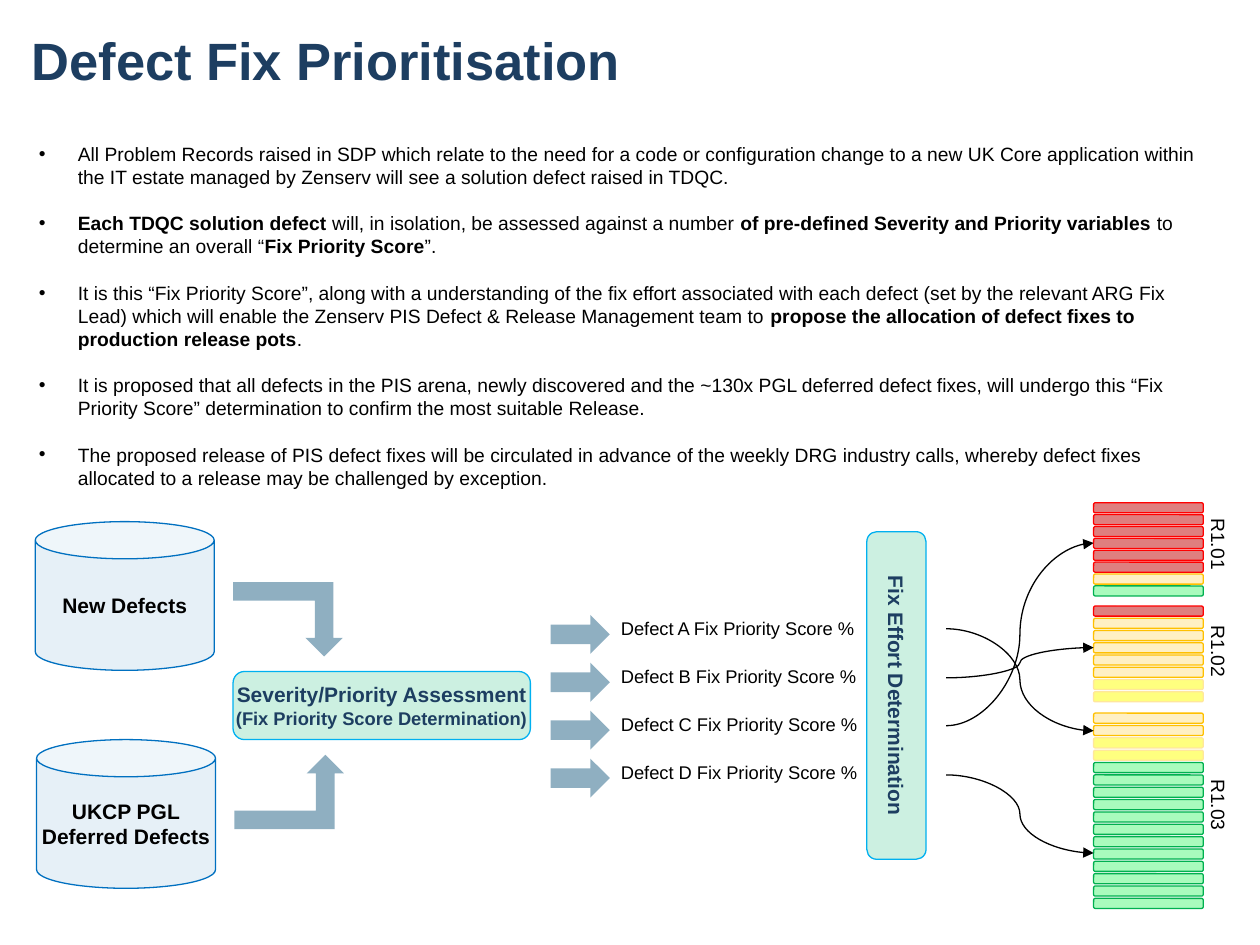
from dataclasses import dataclass

from lxml.etree import SubElement
from pptx import Presentation
from pptx.dml.color import RGBColor
from pptx.enum.shapes import MSO_CONNECTOR as CONNECTOR, MSO_SHAPE as SHAPE
from pptx.enum.text import MSO_ANCHOR as ANCHOR, PP_ALIGN as ALIGN
from pptx.oxml.ns import qn
from pptx.util import Inches, Pt


@dataclass(frozen=True)
class Theme:
    font: str = "Arial"
    ink: str = "000000"
    heading: str = "1D3E61"
    arrow: str = "206085"
    store: tuple = ("CEE3F0", "0070C0")
    step: tuple = ("9AE2C5", "00B0F0")
    red: tuple = ("C00000", "FF0000")
    amber: tuple = ("FFE38B", "FFC000")
    yellow: tuple = ("FFFF00", "FFE79B")
    green: tuple = ("55F97C", "00B050")
    title_size: float = 30
    box_size: float = 12
    body_size: float = 11
    small_size: float = 10.5
    line_width: float = 0.75
    bullet_gap: float = 13.2


THEME = Theme()

POINTS = [
    "All Problem Records raised in SDP which relate to the need for a code or "
    "configuration change to a new UK Core application within the IT estate "
    "managed by Zenserv will see a solution defect raised in TDQC.",
    "**Each TDQC solution defect **will, in isolation, be assessed against a number "
    "**of pre-defined Severity and Priority variables **to determine an overall "
    "“**Fix Priority Score**”.",
    "It is this “Fix Priority Score”, along with a understanding of the fix effort "
    "associated with each defect (set by the relevant ARG Fix Lead) which will "
    "enable the Zenserv PIS Defect & Release Management team to **propose the "
    "allocation of defect fixes to production release pots**.",
    "It is proposed that all defects in the PIS arena, newly discovered and the "
    "~130x PGL deferred defect fixes, will undergo this “Fix Priority Score” "
    "determination to confirm the most suitable Release.",
    "The proposed release of PIS defect fixes will be circulated in advance of the "
    "weekly DRG industry calls, whereby defect fixes allocated to a release may be "
    "challenged by exception.",
]


def write_text(frame, text, size=THEME.body_size, color=THEME.ink, bold=False,
               align=ALIGN.LEFT, bullet=False, gap=0, later_size=None):
    """Fill a frame, one paragraph a line; ** switches bold on and off."""
    for row, line in enumerate(text.split("\n")):
        paragraph = frame.add_paragraph() if row else frame.paragraphs[0]
        paragraph.alignment = align
        if row and gap:
            paragraph.space_before = Pt(gap)
        if bullet:
            props = paragraph._p.get_or_add_pPr()
            props.set("marL", str(Inches(0.31)))
            props.set("indent", str(Inches(-0.31)))
            SubElement(props, qn("a:buFont")).set("typeface", THEME.font)
            SubElement(props, qn("a:buChar")).set("char", "•")
        for part, words in enumerate(line.split("**")):
            if not words:
                continue
            run = paragraph.add_run()
            run.text = words
            run.font.name = THEME.font
            run.font.size = Pt(later_size if row and later_size else size)
            run.font.bold = bold or part % 2 == 1
            run.font.color.rgb = RGBColor.from_string(color)


class SlideBuilder:
    def __init__(self, slide, theme):
        self.slide = slide
        self.theme = theme

    def text(self, text, left, top, width, height, rotation=0, **text_format):
        box = self.slide.shapes.add_textbox(
            Inches(left), Inches(top), Inches(width), Inches(height))
        box.rotation = rotation
        box.text_frame.word_wrap = True
        write_text(box.text_frame, text, **text_format)
        return box.text_frame

    def shape(self, preset, left, top, width, height, fill, line=None):
        """Add a preset shape with a half-transparent fill."""
        shape = self.slide.shapes.add_shape(
            preset, Inches(left), Inches(top), Inches(width), Inches(height))
        shape.shadow.inherit = False
        shape.fill.solid()
        shape.fill.fore_color.rgb = RGBColor.from_string(fill)
        tint = shape._element.spPr.find(qn("a:solidFill")).find(qn("a:srgbClr"))
        SubElement(tint, qn("a:alpha")).set("val", "50000")
        if line:
            shape.line.color.rgb = RGBColor.from_string(line)
            shape.line.width = Pt(self.theme.line_width)
        else:
            shape.line.fill.background()
        return shape

    def labelled(self, preset, text, left, top, width, height, colors,
                 vertical=False, **text_format):
        shape = self.shape(preset, left, top, width, height, *colors)
        frame = shape.text_frame
        frame.word_wrap = False
        frame.vertical_anchor = ANCHOR.MIDDLE
        if vertical:
            frame._txBody.bodyPr.set("vert", "vert")
        write_text(frame, text, size=self.theme.box_size, bold=True,
                   align=ALIGN.CENTER, **text_format)

    def bent_arrow(self, left, top, downward=False):
        arrow = self.shape(SHAPE.BENT_UP_ARROW, left, top, 0.87, 0.59,
                           self.theme.arrow)
        if downward:
            arrow._element.spPr.xfrm.set("flipV", "1")

    def bar_stack(self, first_top, last_top, bands):
        """Spread bars evenly from first_top to last_top; bands are (colors, count)."""
        bars = [colors for colors, count in bands for _ in range(count)]
        pitch = (last_top - first_top) / (len(bars) - 1)
        for row, colors in enumerate(bars):
            self.shape(SHAPE.ROUNDED_RECTANGLE, 8.68, first_top + row * pitch,
                       0.87, 0.08, *colors)

    def curve(self, start_x, start_y, end_x, end_y):
        curve = self.slide.shapes.add_connector(
            CONNECTOR.CURVE, Inches(start_x), Inches(start_y),
            Inches(end_x), Inches(end_y))
        curve.line.color.rgb = RGBColor.from_string(self.theme.ink)
        curve.line.width = Pt(self.theme.line_width)
        SubElement(curve.line._get_or_add_ln(), qn("a:tailEnd")).set("type", "triangle")
        SubElement(curve._element.spPr, qn("a:effectLst"))


def main():
    deck = Presentation()
    deck.slide_width, deck.slide_height = Inches(10), Inches(7.5)
    page = SlideBuilder(deck.slides.add_slide(deck.slide_layouts[6]), THEME)

    title = page.text("Defect Fix Prioritisation", 0.25, -0.06, 9.5, 1.06,
                      size=THEME.title_size, color=THEME.heading, bold=True)
    title.vertical_anchor = ANCHOR.MIDDLE
    title.margin_left = title.margin_right = title.margin_top = title.margin_bottom = 0
    page.text("\n".join(POINTS), 0.21, 1.08, 9.57, 3.08,
              bullet=True, gap=THEME.bullet_gap)

    page.labelled(SHAPE.CAN, "New Defects", 0.28, 4.14, 1.42, 1.18, THEME.store)
    page.labelled(SHAPE.CAN, "UKCP PGL\nDeferred Defects", 0.29, 5.87, 1.42, 1.18,
                  THEME.store)
    page.bent_arrow(1.85, 4.62, downward=True)
    page.bent_arrow(1.86, 5.99)
    page.labelled(SHAPE.ROUNDED_RECTANGLE,
                  "Severity/Priority Assessment\n(Fix Priority Score Determination)",
                  1.85, 5.33, 2.36, 0.54, THEME.step,
                  color=THEME.heading, later_size=THEME.small_size)

    for row, defect in enumerate("ABCD"):
        page.shape(SHAPE.RIGHT_ARROW, 4.37, 4.88 + row * 0.38, 0.47, 0.31, THEME.arrow)
        page.text(f"Defect {defect} Fix Priority Score %", 4.83, 4.85 + row * 0.38,
                  2.68, 0.29, size=THEME.small_size)
    page.labelled(SHAPE.ROUNDED_RECTANGLE, "Fix Effort Determination",
                  6.88, 4.22, 0.47, 2.6, THEME.step, vertical=True, color=THEME.heading)

    releases = [
        ("R1.01", 4.23, 3.99, 4.65,
         [(THEME.red, 6), (THEME.amber, 1), (THEME.green, 1)]),
        ("R1.02", 5.08, 4.81, 5.49,
         [(THEME.red, 1), (THEME.amber, 5), (THEME.yellow, 2)]),
        ("R1.03", 6.3, 5.66, 7.13,
         [(THEME.amber, 2), (THEME.yellow, 2), (THEME.green, 12)]),
    ]
    for release, label_top, first_top, last_top, bands in releases:
        page.bar_stack(first_top, last_top, bands)
        page.text(release, 9.31, label_top, 0.72, 0.29, rotation=90)

    for defect_y, release_y in [(4.99, 5.8), (5.38, 5.14), (5.76, 4.31), (6.15, 6.77)]:
        page.curve(7.51, defect_y, 8.68, release_y)

    deck.save("out.pptx")


if __name__ == "__main__":
    main()
